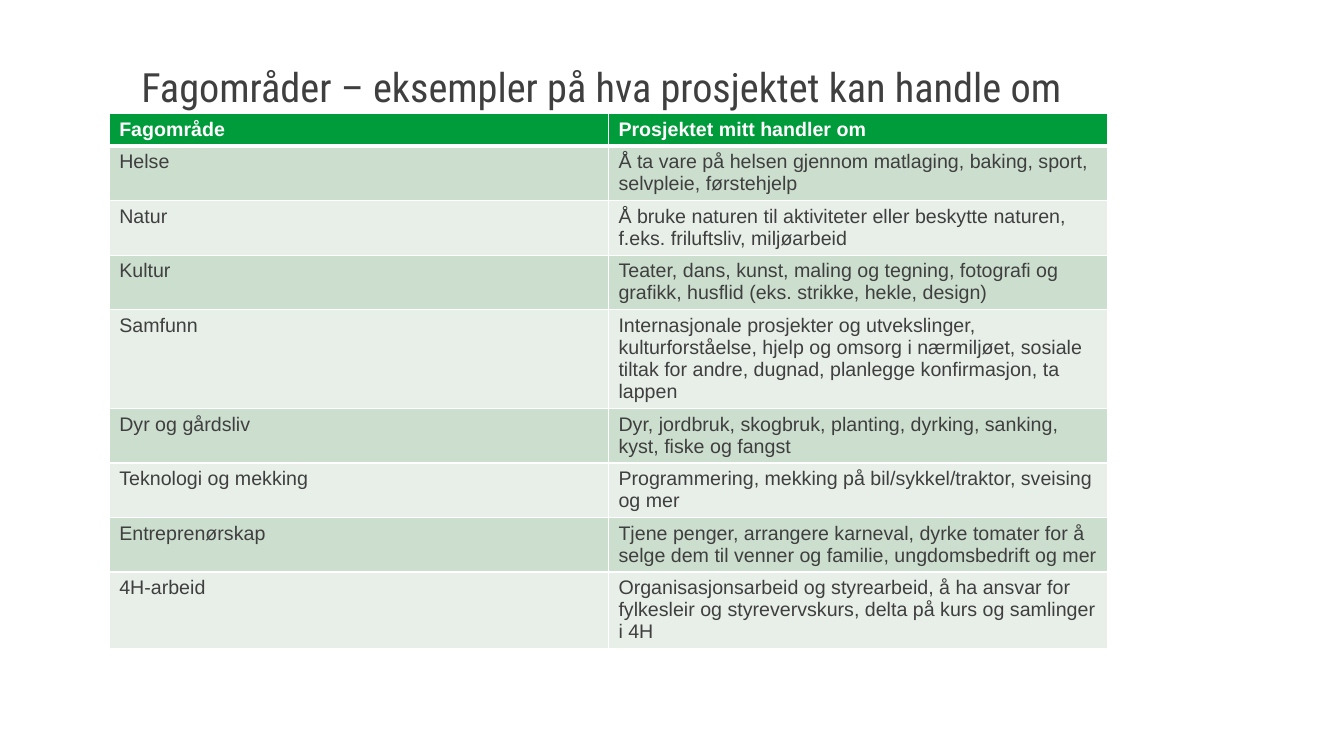
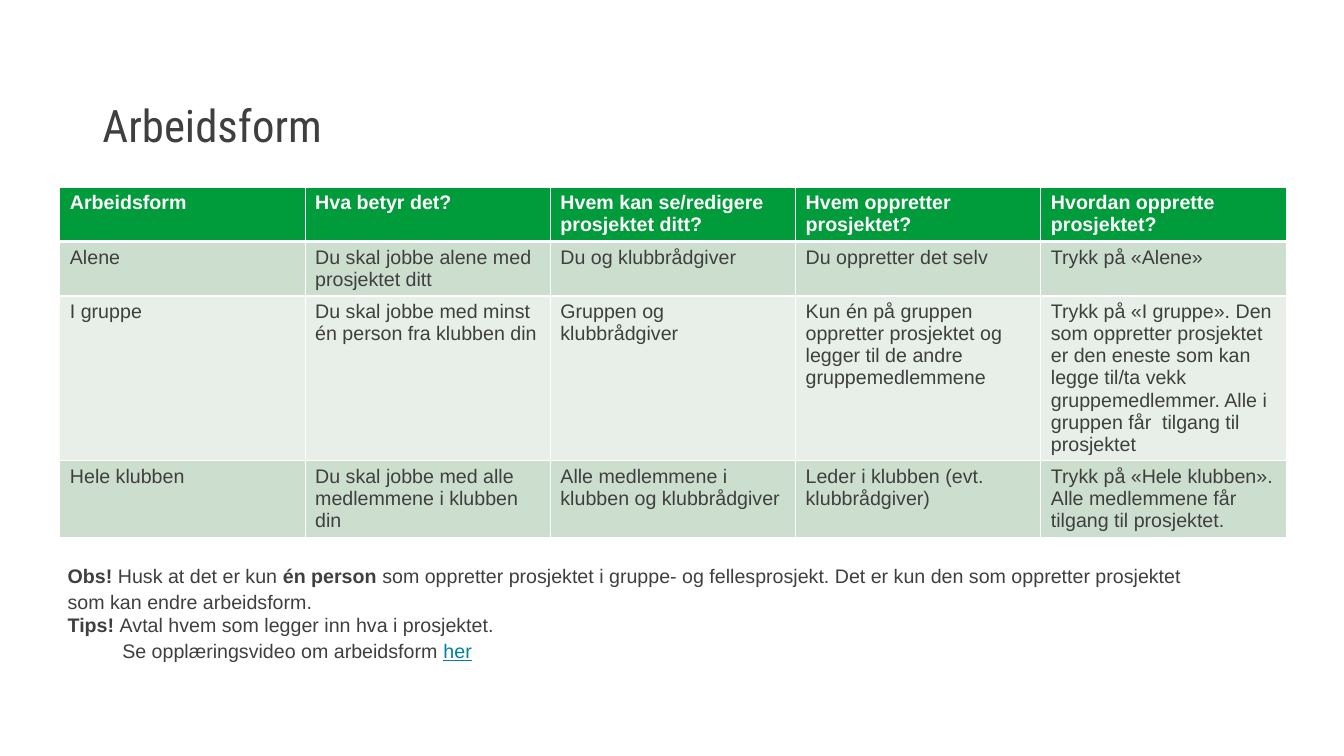
from dataclasses import dataclass
from lxml.etree import SubElement
from pptx import Presentation
from pptx.dml.color import RGBColor
from pptx.enum.text import MSO_ANCHOR, MSO_AUTO_SIZE, PP_ALIGN
from pptx.oxml.ns import qn
from pptx.util import Emu, Pt

SCALE = 9525


def px(n):
    return Emu(n * SCALE)


@dataclass(frozen=True)
class Theme:
    ink: str = "3F3F3F"
    white: str = "FFFFFF"
    green: str = "009B3A"
    bands: tuple = ("CCDECE", "E7EFE8")
    link: str = "007EA5"
    head: str = "Roboto Condensed"
    body: str = "Arial"
    size: float = 14
    thin: float = 1
    thick: float = 3
    line: int = 21
    pad: int = 10


class Deck:
    def __init__(self, theme):
        self.theme = theme
        self.prs = Presentation()
        self.prs.slide_width = px(1280)
        self.prs.slide_height = px(720)
        self.slide = None

    def add(self):
        self.slide = self.prs.slides.add_slide(self.prs.slide_layouts[5])

    def run(self, para, text, color=None, bold=False, size=None, face=None, under=None):
        run = para.add_run()
        run.text = text
        font = run.font
        font.name = face or self.theme.body
        font.size = Pt(size or self.theme.size)
        font.bold = bold
        font.underline = under
        font.color.rgb = RGBColor.from_string(color or self.theme.ink)

    def title(self, text, box, size, align=PP_ALIGN.LEFT):
        shape = self.slide.shapes.title
        shape.left, shape.top, shape.width, shape.height = map(px, box)
        frame = shape.text_frame
        frame.word_wrap = True
        frame.auto_size = MSO_AUTO_SIZE.NONE
        frame.vertical_anchor = MSO_ANCHOR.MIDDLE
        para = frame.paragraphs[0]
        para.alignment = align
        para.line_spacing = 0.9
        self.run(para, text, size=size, face=self.theme.head)

    def edge(self, cell, side, width):
        line = SubElement(cell._tc.get_or_add_tcPr(), qn("a:ln" + side), w=str(Pt(width)))
        fill = SubElement(line, qn("a:solidFill"))
        SubElement(fill, qn("a:srgbClr"), val=self.theme.white)

    def cell(self, cell, text, row):
        look = self.theme
        top = look.thick if row == 1 else look.thin
        low = look.thick if row == 0 else look.thin
        for side, width in zip("LRTB", (look.thin, look.thin, top, low)):
            self.edge(cell, side, width)
        fill = look.bands[(row - 1) % 2] if row else look.green
        cell.fill.solid()
        cell.fill.fore_color.rgb = RGBColor.from_string(fill)
        color = look.ink if row else look.white
        self.run(cell.text_frame.paragraphs[0], text, color, bold=row == 0)

    def table(self, left, top, width, rows, lines):
        tall = [self.theme.pad + self.theme.line * n for n in lines]
        grid = self.slide.shapes.add_table(
            len(rows), len(rows[0]), px(left), px(top), px(width), px(sum(tall))
        ).table
        for r, texts in enumerate(rows):
            grid.rows[r].height = px(tall[r])
            for c, text in enumerate(texts):
                self.cell(grid.cell(r, c), text, r)

    def note(self, box, paras):
        frame = self.slide.shapes.add_textbox(*map(px, box)).text_frame
        frame.word_wrap = True
        for i, (indent, runs) in enumerate(paras):
            para = frame.add_paragraph() if i else frame.paragraphs[0]
            para.line_spacing = 1.1
            if indent:
                para._p.get_or_add_pPr().set("marL", str(px(indent)))
            for text, style in runs:
                self.run(para, text, **style)


FIELDS = [
    ("Fagområde", "Prosjektet mitt handler om"),
    ("Helse", "Å ta vare på helsen gjennom matlaging, baking, sport, selvpleie, førstehjelp"),
    ("Natur", "Å bruke naturen til aktiviteter eller beskytte naturen, f.eks. friluftsliv, miljøarbeid"),
    ("Kultur", "Teater, dans, kunst, maling og tegning, fotografi og grafikk, husflid (eks. strikke, hekle, design)"),
    ("Samfunn", "Internasjonale prosjekter og utvekslinger, kulturforståelse, hjelp og omsorg i nærmiljøet, "
                "sosiale tiltak for andre, dugnad, planlegge konfirmasjon, ta lappen"),
    ("Dyr og gårdsliv", "Dyr, jordbruk, skogbruk, planting, dyrking, sanking, kyst, fiske og fangst"),
    ("Teknologi og mekking", "Programmering, mekking på bil/sykkel/traktor, sveising og mer"),
    ("Entreprenørskap", "Tjene penger, arrangere karneval, dyrke tomater for å selge dem til venner og familie, "
                        "ungdomsbedrift og mer"),
    ("4H-arbeid", "Organisasjonsarbeid og styrearbeid, å ha ansvar for fylkesleir og styrevervskurs, "
                  "delta på kurs og samlinger i 4H"),
]

FORMS = [
    ("Arbeidsform", "Hva betyr det?", "Hvem kan se/redigere prosjektet ditt?",
     "Hvem oppretter prosjektet?", "Hvordan opprette prosjektet?"),
    ("Alene", "Du skal jobbe alene med prosjektet ditt", "Du og klubbrådgiver",
     "Du oppretter det selv", "Trykk på «Alene»"),
    ("I gruppe", "Du skal jobbe med minst én person fra klubben din", "Gruppen og klubbrådgiver",
     "Kun én på gruppen oppretter prosjektet og legger til de andre gruppemedlemmene",
     "Trykk på «I gruppe». Den som oppretter prosjektet er den eneste som kan legge til/ta vekk "
     "gruppemedlemmer. Alle i gruppen får  tilgang til prosjektet"),
    ("Hele klubben", "Du skal jobbe med alle medlemmene i klubben din",
     "Alle medlemmene i klubben og klubbrådgiver", "Leder i klubben (evt. klubbrådgiver)",
     "Trykk på «Hele klubben». Alle medlemmene får tilgang til prosjektet."),
]


def main():
    theme = Theme()
    deck = Deck(theme)
    strong = {"bold": True}

    deck.add()
    deck.title("Fagområder – eksempler på hva prosjektet kan handle om ",
               (88, 66, 979, 39), 28.8, PP_ALIGN.CENTER)
    deck.table(104, 108, 951, FIELDS, (1, 2, 2, 2, 4, 2, 2, 2, 3))

    deck.add()
    deck.title("Arbeidsform", (88, 66, 977, 111), 32)
    deck.table(57, 178, 1168, FORMS, (2, 2, 7, 3))
    deck.note((55, 530, 1114, 55), [(0, [
        ("Obs! ", strong),
        ("Husk at det er kun ", {}),
        ("én person ", strong),
        ("som oppretter prosjektet i gruppe- og fellesprosjekt. "
         "Det er kun den som oppretter prosjektet som kan endre arbeidsform.", {}),
    ])])
    deck.note((55, 577, 705, 55), [
        (0, [("Tips! ", strong), ("Avtal hvem som legger inn hva i prosjektet.", {})]),
        (52, [("Se opplæringsvideo om arbeidsform ", {}),
              ("her", {"color": theme.link, "under": True})]),
    ])
    deck.prs.save("out.pptx")


if __name__ == "__main__":
    main()
